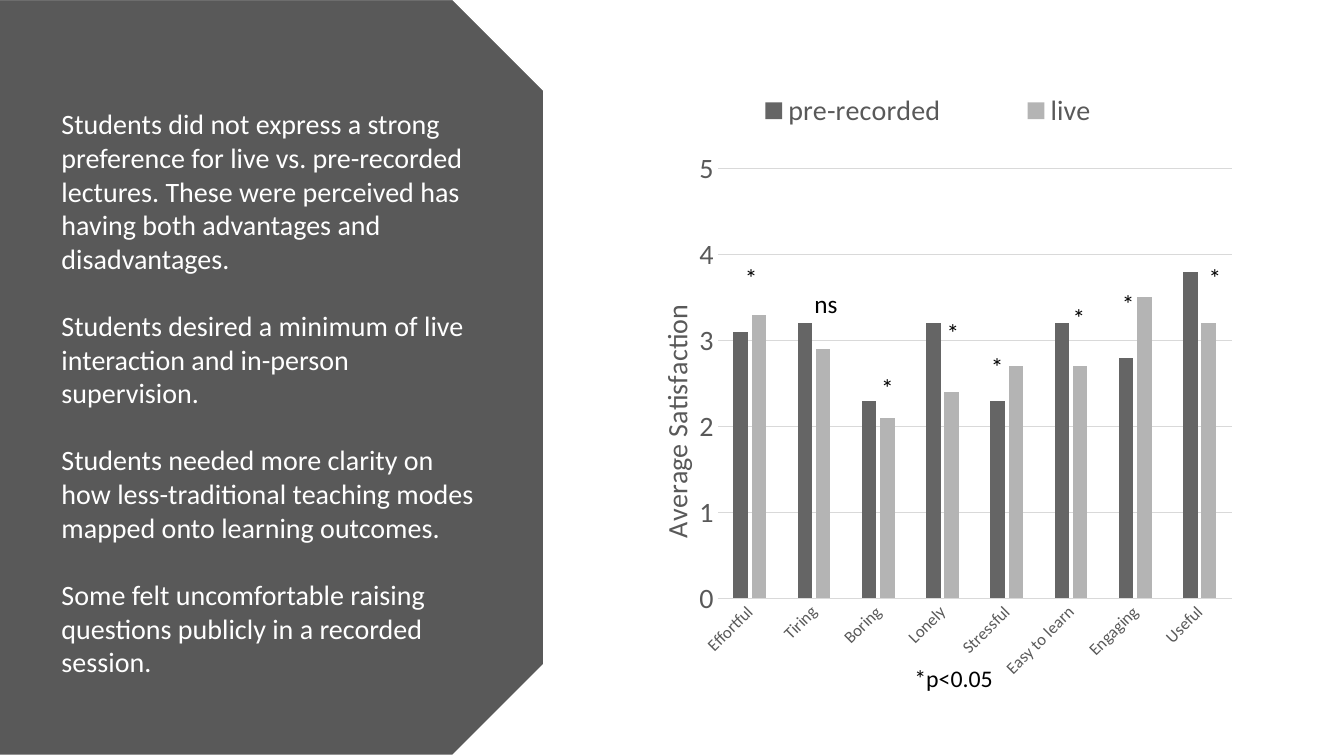
"""Build the slide comparing satisfaction with pre-recorded and live lectures."""
from lxml.etree import SubElement
from pptx import Presentation
from pptx.chart.data import CategoryChartData
from pptx.dml.color import RGBColor
from pptx.enum.chart import XL_CHART_TYPE, XL_LEGEND_POSITION, XL_TICK_MARK
from pptx.enum.shapes import MSO_SHAPE
from pptx.enum.text import MSO_ANCHOR, MSO_AUTO_SIZE
from pptx.oxml.ns import qn
from pptx.util import Inches, Pt

FONT = "Calibri"
COLORS = {"panel": "595959", "white": "FFFFFF", "black": "000000",
          "label": "595959", "grid": "D9D9D9"}
FINDINGS = [
    "Students did not express a strong preference for live vs. pre-recorded lectures. "
    "These were perceived has having both advantages and disadvantages.",
    "Students desired a minimum of live interaction and in-person supervision.",
    "Students needed more clarity on how less-traditional teaching modes mapped onto "
    "learning outcomes.",
    "Some felt uncomfortable raising questions publicly in a recorded session.",
]
CATEGORIES = ["Effortful", "Tiring", "Boring", "Lonely", "Stressful",
              "Easy to learn", "Engaging", "Useful"]
SERIES = [
    ("pre-recorded", "656565", [3.1, 3.2, 2.3, 3.2, 2.3, 3.2, 2.8, 3.8]),
    ("live", "B4B4B4", [3.3, 2.9, 2.1, 2.4, 2.7, 2.7, 3.5, 3.2]),
]
MARKS = [
    ("*", 7.29, 2.55), ("*", 8.64, 3.64), ("*", 9.29, 3.1), ("*", 9.73, 3.44),
    ("*", 10.54, 2.95), ("*", 11.03, 2.81), ("*", 11.89, 2.55), ("ns", 7.98, 2.81),
]
MARK_WIDTHS = {"*": 0.33, "ns": 0.43}
NOTE = "*p<0.05"


def color(name):
    return RGBColor.from_string(COLORS[name])


def style(font, size, name):
    font.name, font.size, font.bold = FONT, Pt(size), False
    font.color.rgb = color(name)


def set_layout(parent, index, **values):
    """Give a chart part a manual layout, in fractions of the chart."""
    for old in parent.findall(qn("c:layout")):
        parent.remove(old)
    layout = SubElement(parent, qn("c:layout"))
    parent.insert(index, layout)
    manual = SubElement(layout, qn("c:manualLayout"))
    for tag, value in values.items():
        SubElement(manual, qn("c:" + tag)).set("val", str(value))


def add_panel(page):
    panel = page.shapes.add_shape(MSO_SHAPE.SNIP_2_SAME_RECTANGLE, Inches(-1.07),
                                  Inches(1.03), Inches(7.5), Inches(5.43))
    panel.rotation = 90
    panel.shadow.inherit = False
    panel.fill.solid()
    panel.fill.fore_color.rgb = color("panel")
    panel.line.color.rgb = color("white")
    panel.line.width = Pt(1)


def add_findings(page):
    body = page.placeholders[1]
    body.left, body.top = Inches(0.51), Inches(1.01)
    body.width, body.height = Inches(4.39), Inches(5.82)
    page.shapes._spTree.append(body._element)
    frame = body.text_frame
    frame.text = "\n".join(FINDINGS)
    frame.word_wrap = True
    frame.auto_size = MSO_AUTO_SIZE.NONE
    frame.vertical_anchor = MSO_ANCHOR.TOP
    for index, para in enumerate(frame.paragraphs):
        properties = para._p.get_or_add_pPr()
        properties.set("marL", "0")
        properties.set("indent", "0")
        SubElement(properties, qn("a:buNone"))
        para.space_before = Pt(24 if index else 0)
        style(para.runs[0].font, 20, "white")


def add_satisfaction_chart(page):
    data = CategoryChartData(number_format="0.0")
    data.categories = CATEGORIES
    for name, _, values in SERIES:
        data.add_series(name, values)
    chart = page.shapes.add_chart(XL_CHART_TYPE.COLUMN_CLUSTERED, Inches(5.68), Inches(0.52),
                                  Inches(7.12), Inches(6.44), data).chart
    style(chart.font, 20, "black")
    chart.has_title = False
    plot = chart.plots[0]
    plot.gap_width, plot.overlap, plot.vary_by_categories = 219, -27, False
    for series, (_, fill, _) in zip(plot.series, SERIES):
        series.format.fill.solid()
        series.format.fill.fore_color.rgb = RGBColor.from_string(fill)
    set_layout(chart._chartSpace.chart.plotArea, 0, layoutTarget="inner", xMode="edge",
               yMode="edge", x=0.202, y=0.179, w=0.716, h=0.662)

    category_axis, value_axis = chart.category_axis, chart.value_axis
    for axis, size in ((category_axis, 12), (value_axis, 20)):
        axis.major_tick_mark = axis.minor_tick_mark = XL_TICK_MARK.NONE
        style(axis.tick_labels.font, size, "label")
    category_axis._element.find(qn("c:txPr")).find(qn("a:bodyPr")).set("rot", "-2700000")
    value_axis.minimum_scale, value_axis.maximum_scale, value_axis.major_unit = 0, 5, 1
    value_axis.tick_labels.number_format = "0"
    value_axis.tick_labels.number_format_is_linked = False
    value_axis.format.line.fill.background()
    for line in (category_axis.format.line, value_axis.major_gridlines.format.line):
        line.color.rgb = color("grid")
        line.width = Pt(0.75)

    title = value_axis.axis_title
    title.text_frame.text = "Average Satisfaction"
    title.text_frame._txBody.find(qn("a:bodyPr")).set("rot", "-5400000")
    style(title.text_frame.paragraphs[0].runs[0].font, 20, "label")
    set_layout(title._element, 1, xMode="edge", yMode="edge", x=0.11, y=0.38)

    chart.has_legend = True
    legend = chart.legend
    legend.position = XL_LEGEND_POSITION.RIGHT
    legend.include_in_layout = False
    style(legend.font, 20, "label")
    set_layout(legend._element, 1, xMode="edge", yMode="edge", x=0.16, y=0.05, w=0.67, h=0.08)


def add_label(page, text, left, top, width, height, size):
    box = page.shapes.add_textbox(Inches(left), Inches(top), Inches(width), Inches(height))
    frame = box.text_frame
    frame.text = text
    frame.word_wrap = False
    style(frame.paragraphs[0].runs[0].font, size, "black")
    return frame


def main():
    deck = Presentation()
    deck.slide_width, deck.slide_height = Inches(13.33), Inches(7.5)
    page = deck.slides.add_slide(deck.slide_layouts[1])
    title = page.shapes.title._element
    title.getparent().remove(title)
    add_panel(page)
    add_satisfaction_chart(page)
    for text, left, top in MARKS:
        frame = add_label(page, text, left, top, MARK_WIDTHS[text], 0.4, 18)
        frame.auto_size = MSO_AUTO_SIZE.SHAPE_TO_FIT_TEXT
    note = add_label(page, NOTE, 8.97, 6.6, 1.15, 0.33, 17)
    note.word_wrap = True
    note.vertical_anchor = MSO_ANCHOR.MIDDLE
    note.paragraphs[0].line_spacing = 0.7
    add_findings(page)
    deck.save("out.pptx")


if __name__ == "__main__":
    main()
